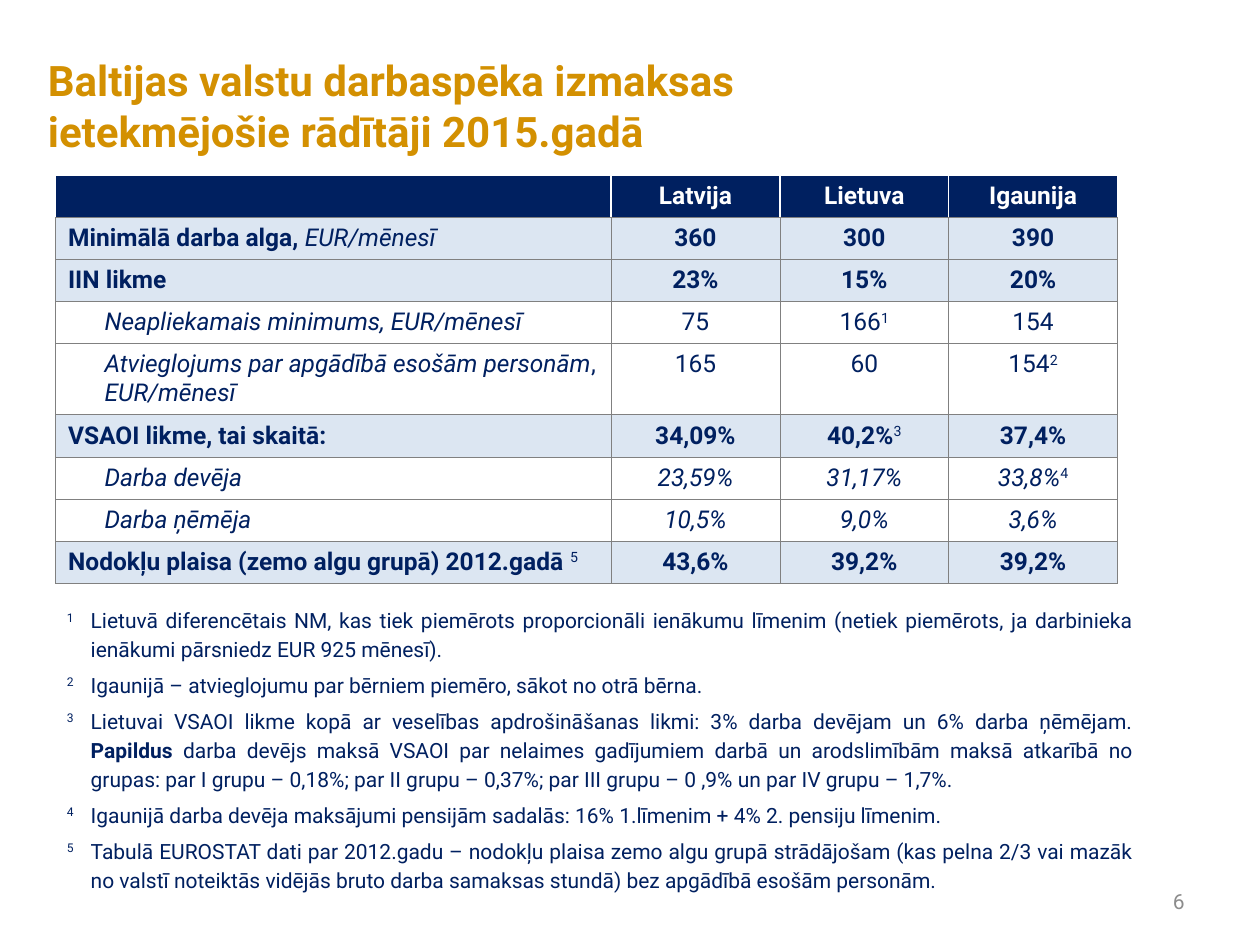
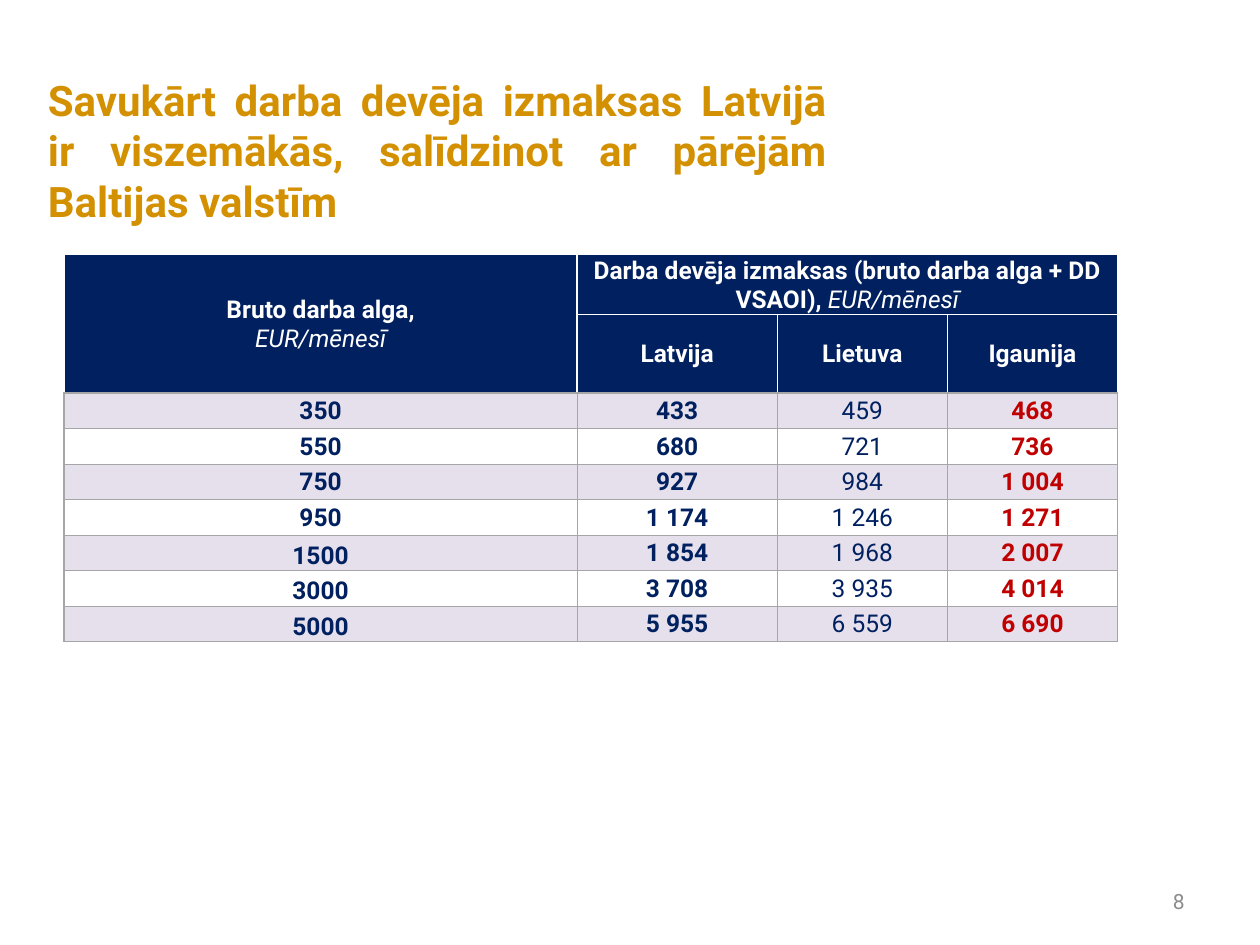
import pptx
import pptx.util
import pptx.dml.color
import pptx.enum.text
import pptx.oxml
import pptx.oxml.ns

Pt = pptx.util.Pt
Inches = pptx.util.Inches
ALIGN = pptx.enum.text.PP_ALIGN
ANCHOR = pptx.enum.text.MSO_ANCHOR
NO_FIT = pptx.enum.text.MSO_AUTO_SIZE.NONE

# Shared look
FONT = "Roboto"
COLORS = {
    "white": "FFFFFF", "navy": "002060", "gold": "D39001", "red": "C00000",
    "number": "8C8C8C", "blue_band": "DCE6F2", "lilac_band": "E6E0EC",
    "grid_dark": "808080", "grid_light": "A6A6A6",
}
COUNTRIES = ["Latvija", "Lietuva", "Igaunija"]

# The slide is a grid of 100 columns and 100 rows
WIDTH, HEIGHT = Inches(10), Inches(7.5)
COL, ROW = WIDTH / 100, HEIGHT / 100
TITLE_LEFT, TITLE_TOP, TITLE_WIDTH = 2.8, 6.93, 63.8
NUMBER_BOX = (71.7, 92.67, 23.3, 5.33)


def put(obj, **values):
    for name, value in values.items():
        setattr(obj, name, value)


def rgb(name):
    return pptx.dml.color.RGBColor.from_string(COLORS[name])


def place(sp, box):
    x, y, w, h = box
    put(sp, left=round(x * COL), top=round(y * ROW),
        width=round(w * COL), height=round(h * ROW))


def paint(obj, color):
    obj.fill.solid()
    obj.fill.fore_color.rgb = rgb(color)


def write(p, runs, size, color, align=ALIGN.LEFT):
    """Runs are (text, style): b bold, i italic, ^ superscript."""
    p.alignment = align
    for text, style in runs:
        r = p.add_run()
        r.text = text
        put(r.font, name=FONT, size=Pt(size), bold="b" in style, italic="i" in style)
        r.font.color.rgb = rgb(color)
        if "^" in style:
            r._r.get_or_add_rPr().set("baseline", "30000")
    if not runs:
        p._p.get_or_add_endParaRPr().set("sz", str(size * 100))


def add_xml(parent, xml, index=None):
    tag, rest = xml.split(" ", 1)
    el = pptx.oxml.parse_xml(f"<{tag} {pptx.oxml.ns.nsdecls('a')} {rest}")
    parent.insert(len(parent) if index is None else index, el)


def set_borders(cell, left, right, top, bottom):
    """Each side is (color, width in points)."""
    tcPr = cell._tc.get_or_add_tcPr()
    for i, (side, (color, width)) in enumerate(zip("LRTB", (left, right, top, bottom))):
        add_xml(tcPr, f'a:ln{side} w="{Pt(width)}"><a:solidFill><a:srgbClr '
                      f'val="{COLORS[color]}"/></a:solidFill></a:ln{side}>', i)


# Slide frame: title and page number
def add_frame(prs, layout, title, height, number, align=ALIGN.LEFT):
    s = prs.slides.add_slide(prs.slide_layouts[layout])
    place(s.shapes.title, (TITLE_LEFT, TITLE_TOP, TITLE_WIDTH, height))
    paint(s.shapes.title, "white")
    tf = s.shapes.title.text_frame
    put(tf, auto_size=NO_FIT, word_wrap=True, vertical_anchor=ANCHOR.MIDDLE)
    write(tf.paragraphs[0], [(title, "b")], 24, "gold", align)

    sp = s.shapes.add_textbox(0, 0, 0, 0)
    place(sp, NUMBER_BOX)
    put(sp.text_frame, word_wrap=True, vertical_anchor=ANCHOR.MIDDLE)
    write(sp.text_frame.paragraphs[0], [(number, "")], 12, "number", ALIGN.RIGHT)
    return s


def add_grid(s, box, col_shares, row_shares):
    sp = s.shapes.add_table(len(row_shares), len(col_shares), 0, 0, 0, 0)
    place(sp, box)
    table = sp.table
    put(table, first_row=False, horz_banding=False)
    for col, share in zip(table.columns, col_shares):
        col.width = round(box[2] * COL * share / sum(col_shares))
    for row, share in zip(table.rows, row_shares):
        row.height = round(box[3] * ROW * share / sum(row_shares))
    return table


# Indicator table: header, bold band rows and indented detail rows
def add_indicators(s, box, rows):
    table = add_grid(s, box, [4.41, 1.34, 1.34, 1.34], [1] * 4 + [1.68] + [1] * 4)
    line, white = ("grid_dark", 0.5), ("white", 1)
    header = ("header", [], *[[(name, "b")] for name in COUNTRIES])
    fills = {"header": "navy", "band": "blue_band", "detail": "white"}
    for i, (kind, *cells) in enumerate([header, *rows]):
        is_header = kind == "header"
        for j, runs in enumerate(cells):
            cell = table.cell(i, j)
            p = cell.text_frame.paragraphs[0]
            write(p, runs, 14, "white" if is_header else "navy",
                  ALIGN.CENTER if j else ALIGN.LEFT)
            if kind == "detail" and j == 0:
                p._p.get_or_add_pPr().set("marL", str(Inches(0.29)))
            paint(cell, fills[kind])
            edge = white if is_header else line
            set_borders(cell, edge, edge, edge, line)


# Numbered notes with a hanging indent
def add_notes(s, box, notes):
    sp = s.placeholders[1]
    place(sp, box)
    paint(sp, "white")
    tf = sp.text_frame
    put(tf, auto_size=NO_FIT, word_wrap=True, vertical_anchor=ANCHOR.TOP)
    for i, runs in enumerate(notes):
        p = tf.add_paragraph() if i else tf.paragraphs[0]
        pPr = p._p.get_or_add_pPr()
        put_indent = {"marL": Inches(0.19), "indent": -Inches(0.19)}
        for name, value in put_indent.items():
            pPr.set(name, str(value))
        add_xml(pPr, "a:buNone />")
        add_xml(pPr, f'a:tabLst ><a:tab pos="{Inches(0.2)}" algn="l"/></a:tabLst>')
        put(p, line_spacing=1.15, space_before=Pt(0), space_after=Pt(4))
        write(p, [(str(i + 1), "^"), ("\t", "")] + runs, 12, "navy", ALIGN.JUSTIFY)


# Cost table: two-level header over banded rows
def add_costs(s, box, rows):
    table = add_grid(s, box, [4.07, 1.59, 1.35, 1.35], [0.46, 0.62] + [0.28] * len(rows))
    table.cell(0, 0).merge(table.cell(1, 0))
    table.cell(0, 1).merge(table.cell(0, 3))
    last = len(table.columns) - 1
    for i in range(len(table.rows)):
        for j in range(last + 1):
            cell = table.cell(i, j)
            put(cell, margin_left=Inches(0.01), margin_right=Inches(0.01),
                margin_top=Inches(0.01), margin_bottom=0, vertical_anchor=ANCHOR.MIDDLE)
            if i < 2:
                paint(cell, "navy")
                bottom = ("grid_light", 1) if i or j == 0 else ("white", 0.5)
                top = ("white", 0.5 if i else 1)
                set_borders(cell, ("white", 1), ("white", 1), top, bottom)
            else:
                paint(cell, "white" if i % 2 else "lilac_band")
                widths = (0.5 if j else 1, 1 if j == last else 0.5, 1 if i == 2 else 0.5, 0.5)
                set_borders(cell, *[("grid_light", w) for w in widths])

    # Header text
    tf = table.cell(0, 0).text_frame
    write(tf.paragraphs[0], [("Bruto darba alga,", "b")], 14, "white", ALIGN.CENTER)
    write(tf.add_paragraph(), [("EUR/mēnesī", "i")], 14, "white", ALIGN.CENTER)
    write(table.cell(0, 1).text_frame.paragraphs[0],
          [("Darba devēja izmaksas (bruto darba alga + DD VSAOI), ", "b"), ("EUR/mēnesī", "i")],
          14, "white", ALIGN.CENTER)
    for j, name in enumerate(COUNTRIES, 1):
        write(table.cell(1, j).text_frame.paragraphs[0], [(name, "b")], 14, "white", ALIGN.CENTER)

    # Values: the highest cost is red
    formats = [("b", "navy"), ("b", "navy"), ("", "navy"), ("b", "red")]
    for i, row in enumerate(rows, 2):
        for j, (text, (style, color)) in enumerate(zip(row, formats)):
            write(table.cell(i, j).text_frame.paragraphs[0], [(text, style)], 14, color, ALIGN.CENTER)
        if len(row[0]) > 3:
            table.cell(i, 0).vertical_anchor = ANCHOR.BOTTOM


def styled(values, style):
    return [[(value, style)] for value in values]


INDICATORS = [
    ("band", [("Minimālā darba alga, ", "b"), ("EUR/mēnesī", "i")],
     *styled(["360", "300", "390"], "b")),
    ("band", [("IIN likme", "b")], *styled(["23%", "15%", "20%"], "b")),
    ("detail", [("Neapliekamais minimums, EUR/mēnesī", "i")],
     [("75", "")], [("166", ""), ("1", "^")], [("154", "")]),
    ("detail", [("Atvieglojums par apgādībā esošām personām", "i"), (", ", ""), ("EUR/mēnesī", "i")],
     [("165", "")], [("60", "")], [("154", ""), ("2", "^")]),
    ("band", [("VSAOI likme, tai skaitā:", "b")],
     [("34,09%", "b")], [("40,2%", "b"), ("3", "^")], [("37,4%", "b")]),
    ("detail", [("Darba devēja", "i")],
     [("23,59%", "i")], [("31,17%", "i")], [("33,8%", "i"), ("4", "^")]),
    ("detail", [("Darba ņēmēja", "i")], *styled(["10,5%", "9,0%", "3,6%"], "i")),
    ("band", [("Nodokļu plaisa (zemo algu grupā) 2012.gadā ", "b"), ("5", "^")],
     *styled(["43,6%", "39,2%", "39,2%"], "b")),
]

NOTES = [
    [("Lietuvā diferencētais NM, kas tiek piemērots proporcionāli ienākumu līmenim "
      "(netiek piemērots, ja darbinieka ienākumi pārsniedz EUR 925 mēnesī).", "")],
    [("Igaunijā – atvieglojumu par bērniem piemēro, sākot no otrā bērna.", "")],
    [("Lietuvai VSAOI likme kopā ar veselības apdrošināšanas likmi: "
      "3% darba devējam un 6% darba ņēmējam. ", ""),
     ("Papildus ", "b"),
     ("darba devējs maksā VSAOI par nelaimes gadījumiem darbā un arodslimībām maksā "
      "atkarībā no grupas: par I grupu – 0,18%; par II grupu – 0,37%; "
      "par III grupu – 0 ,9% un par IV grupu – 1,7%.", "")],
    [("Igaunijā darba devēja maksājumi pensijām sadalās: "
      "16% 1.līmenim + 4% 2. pensiju līmenim.", "")],
    [("Tabulā EUROSTAT dati par 2012.gadu – nodokļu plaisa zemo algu grupā strādājošam "
      "(kas pelna 2/3 vai mazāk no valstī noteiktās vidējās bruto darba samaksas stundā) "
      "bez apgādībā esošām personām.", "")],
]

COSTS = [
    ("350", "433", "459", "468"),
    ("550", "680", "721", "736"),
    ("750", "927", "984", "1 004"),
    ("950", "1 174", "1 246", "1 271"),
    ("1500", "1 854", "1 968", "2 007"),
    ("3000", "3 708", "3 935", "4 014"),
    ("5000", "5 955", "6 559", "6 690"),
]


def main():
    prs = pptx.Presentation()
    put(prs, slide_width=WIDTH, slide_height=HEIGHT)

    s = add_frame(prs, 1, "Baltijas valstu darbaspēka izmaksas ietekmējošie rādītāji 2015.gadā",
                  8.4, "6")
    add_indicators(s, (4.4, 18.53, 84.3, 42.67), INDICATORS)
    add_notes(s, (4.3, 63.2, 86.7, 32.27), NOTES)

    s = add_frame(prs, 5, "Savukārt darba devēja izmaksas Latvijā ir viszemākās, "
                          "salīdzinot ar pārējām Baltijas valstīm", 17.87, "8", ALIGN.JUSTIFY)
    add_costs(s, (5.1, 26.93, 83.6, 40.8), COSTS)

    prs.save("out.pptx")


if __name__ == "__main__":
    main()
